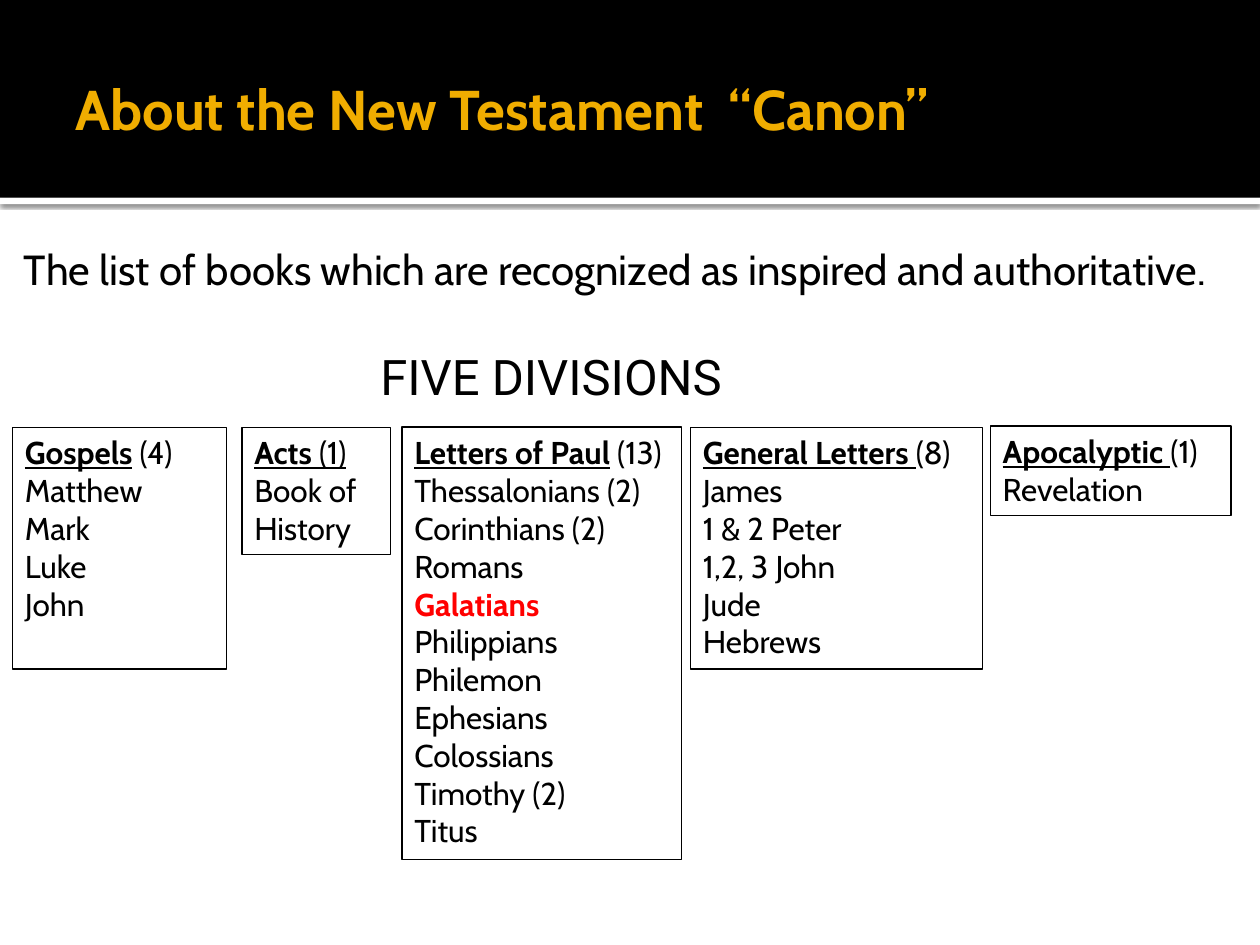
from lxml import etree
from pptx import Presentation
from pptx.dml.color import RGBColor
from pptx.enum.shapes import MSO_SHAPE as Shape
from pptx.enum.text import MSO_ANCHOR as Anchor, MSO_AUTO_SIZE as AutoSize, PP_ALIGN as Align
from pptx.oxml import parse_xml
from pptx.oxml.ns import qn
from pptx.util import Inches, Pt


def color(value):
    return RGBColor.from_string(value)


def add_run(para, text, size, hue="000000", bold=False, underline=False, font="Cabin"):
    span = para.add_run()
    span.text = text
    span.font.name = font
    span.font.size = Pt(size)
    span.font.bold = bold
    span.font.underline = underline
    span.font.color.rgb = color(hue)


deck = Presentation()
deck.slide_width, deck.slide_height = Inches(10), Inches(7.5)
page = deck.slides.add_slide(deck.slide_layouts[1])

bands = [(1.57, 0.05, "FFFFFF"), (0, 1.57, "000000")]
for order, (top, height, fill) in enumerate(bands):
    band = page.shapes.add_shape(Shape.RECTANGLE, 0, Inches(top), Inches(10), Inches(height))
    band.shadow.inherit = False
    band.fill.solid()
    band.fill.fore_color.rgb = color(fill)
    band.line.fill.background()
    page.shapes._spTree.insert(2 + order, band._element)
    if order == 0:
        effects = band._element.spPr.find(qn("a:effectLst"))
        effects.append(parse_xml(
            '<a:outerShdw xmlns:a="http://schemas.openxmlformats.org/drawingml/2006/main" '
            'blurRad="31750" dist="10160" dir="5400000" algn="t" rotWithShape="0">'
            '<a:srgbClr val="000000"><a:alpha val="60000"/></a:srgbClr></a:outerShdw>'))

title, body = page.placeholders
placements = [
    (title, (0.5, 0.17, 9, 1.37), (0.1, 0.05, 0.05, 0.05), Anchor.MIDDLE),
    (body, (0, 1.83, 10, 5.58), (0.06, 0.1, 0.1, 0.05), Anchor.TOP),
]
for holder, place, insets, anchor in placements:
    holder.left, holder.top, holder.width, holder.height = [Inches(n) for n in place]
    frame = holder.text_frame
    frame.margin_left, frame.margin_top, frame.margin_right, frame.margin_bottom = [
        Inches(n) for n in insets]
    frame.vertical_anchor = anchor
    frame.auto_size = AutoSize.NONE
    frame.paragraphs[0].alignment = Align.LEFT
    frame.paragraphs[0].space_before = Pt(0)

add_run(title.text_frame.paragraphs[0], "About the New Testament  “Canon”", 32, "F0AD00", True)
summary = body.text_frame.paragraphs[0]
add_run(summary, "The list of books which are recognized as inspired and authoritative.", 24)
properties = summary._p.get_or_add_pPr()
properties.set("marL", str(Inches(0.13)))
properties.set("indent", "0")
etree.SubElement(properties, qn("a:buNone"))

divisions = [
    (0.1, 3.39, 1.7, 1.92, "Gospels", " (4)", ["Matthew", "Mark", "Luke", "John"]),
    (1.92, 3.39, 1.18, 1.01, "Acts ", "(1)", ["Book of History"]),
    (3.19, 3.39, 2.22, 3.43, "Letters of Paul", " (13)",
     ["Thessalonians (2)", "Corinthians (2)", "Romans", "Galatians", "Philippians",
      "Philemon", "Ephesians", "Colossians", "Timothy (2)", "Titus"]),
    (5.48, 3.39, 2.32, 1.92, "General Letters ", "(8)",
     ["James", "1 & 2 Peter", "1,2, 3 John", "Jude", "Hebrews"]),
    (7.86, 3.38, 1.91, 0.71, "Apocalyptic ", "(1)", ["Revelation"]),
]
for left, top, width, height, name, count, books in divisions:
    box = page.shapes.add_shape(
        Shape.RECTANGLE, Inches(left), Inches(top), Inches(width), Inches(height))
    box.shadow.inherit = False
    box.fill.background()
    box.line.color.rgb = color("000000")
    box.line.width = Pt(0.75)
    frame = box.text_frame
    frame.word_wrap = name != "Letters of Paul"
    frame.vertical_anchor = Anchor.TOP
    heading = frame.paragraphs[0]
    heading.alignment = Align.LEFT
    add_run(heading, name, 18, bold=True, underline=True)
    add_run(heading, count, 18, underline=name == "Acts ")
    for book in books:
        para = frame.add_paragraph()
        para.alignment = Align.LEFT
        current = book == "Galatians"
        add_run(para, book, 18, "FF0000" if current else "000000", current)

caption = page.shapes.add_textbox(Inches(2.92), Inches(2.7), Inches(3.09), Inches(0.57))
caption.text_frame.word_wrap = False
add_run(caption.text_frame.paragraphs[0], "FIVE DIVISIONS", 28, font="Roboto")

deck.save("out.pptx")
